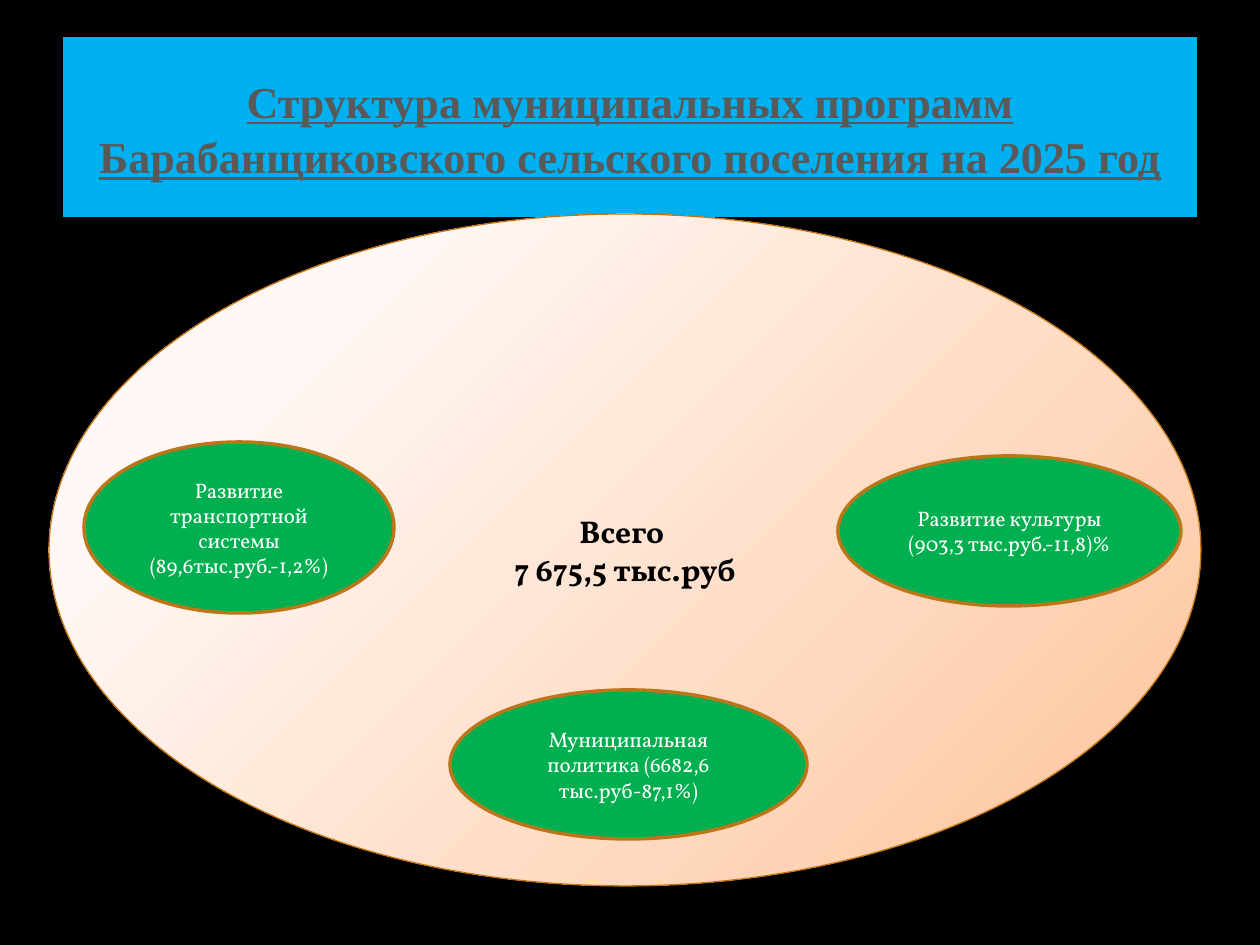
from dataclasses import dataclass

from lxml.etree import fromstring
from pptx import Presentation
from pptx.dml.color import RGBColor as Rgb
from pptx.enum.shapes import MSO_SHAPE as Kind
from pptx.enum.text import MSO_ANCHOR as Anchor, MSO_AUTO_SIZE as Fit, PP_ALIGN as Align
from pptx.oxml.ns import nsdecls
from pptx.util import Pt

PX = 914400 // 126
HUES = {
    "back": "000000", "band": "00B0F0", "title": "595959",
    "rim": "C07512", "light": "FFF8F5", "peach": "FEC399",
    "green": "00B050", "edge": "BB761A", "white": "FFFFFF", "black": "000000",
}


@dataclass
class Box:
    left: int
    top: int
    width: int
    height: int

    def emu(self) -> list[int]:
        return [n * PX for n in (self.left, self.top, self.width, self.height)]


@dataclass
class Program:
    box: Box
    text: str


PROGRAMS = [
    Program(Box(450, 690, 357, 149), "Муниципальная политика (6682,6 тыс.руб-87,1%)"),
    Program(Box(84, 442, 310, 171), "Развитие транспортной системы (89,6тыс.руб.-1,2%)"),
    Program(Box(838, 456, 343, 150), "Развитие культуры (903,3 тыс.руб.-11,8)%"),
]


def hue(name: str) -> Rgb:
    return Rgb.from_string(HUES[name])


def write(shape, text: str, font: str, size: float, color: str, bold=False, line=False) -> None:
    frame = shape.text_frame
    frame.text = text
    frame.word_wrap = True
    frame.auto_size = Fit.NONE
    frame.vertical_anchor = Anchor.MIDDLE
    for para in frame.paragraphs:
        para.alignment = Align.CENTER
        for run in para.runs:
            face = run.font
            face.name, face.size = font, Pt(size)
            face.bold, face.underline = bold, line
            face.color.rgb = hue(color)


def oval(slide, box: Box, edge: str, width: float):
    shape = slide.shapes.add_shape(Kind.OVAL, *box.emu())
    shape.shadow.inherit = False
    shape.line.color.rgb = hue(edge)
    shape.line.width = Pt(width)
    return shape


def shade(shape) -> None:
    """Fill with a radial gradient that spreads from the top left, and cast a soft shadow."""
    grad = fromstring(
        f'<a:gradFill {nsdecls("a")} rotWithShape="1"><a:gsLst>'
        f'<a:gs pos="20000"><a:srgbClr val="{HUES["light"]}"/></a:gs>'
        f'<a:gs pos="100000"><a:srgbClr val="{HUES["peach"]}"/></a:gs></a:gsLst>'
        '<a:path path="circle"><a:fillToRect l="-15000" t="-15000" r="115000" b="115000"/>'
        '</a:path></a:gradFill>')
    shape.fill.gradient()
    props = shape._element.spPr
    props.replace(props.find("{*}gradFill"), grad)
    props.find("{*}effectLst").append(fromstring(
        f'<a:outerShdw {nsdecls("a")} blurRad="101600" dist="129540" dir="2700000">'
        f'<a:srgbClr val="{HUES["black"]}"><a:alpha val="35000"/></a:srgbClr></a:outerShdw>'))


def main() -> None:
    deck = Presentation()
    deck.slide_width, deck.slide_height = 1260 * PX, 945 * PX
    slide = deck.slides.add_slide(deck.slide_layouts[5])
    slide.background.fill.solid()
    slide.background.fill.fore_color.rgb = hue("back")

    title = slide.shapes.title
    title.left, title.top, title.width, title.height = Box(63, 37, 1134, 180).emu()
    title.fill.solid()
    title.fill.fore_color.rgb = hue("band")
    write(title, "Структура муниципальных программ Барабанщиковского сельского поселения на 2025 год",
          "Times New Roman", 25.2, "title", bold=True, line=True)
    title.text_frame.paragraphs[0].line_spacing = 1.05

    total = oval(slide, Box(49, 214, 1152, 672), "rim", 0.75)
    shade(total)
    write(total, "Всего \n7 675,5 тыс.руб", "Vollkorn", 18, "black", bold=True)

    for item in PROGRAMS:
        shape = oval(slide, item.box, "edge", 2)
        shape.fill.solid()
        shape.fill.fore_color.rgb = hue("green")
        write(shape, item.text, "Vollkorn", 12, "white")

    deck.save("out.pptx")


if __name__ == "__main__":
    main()
